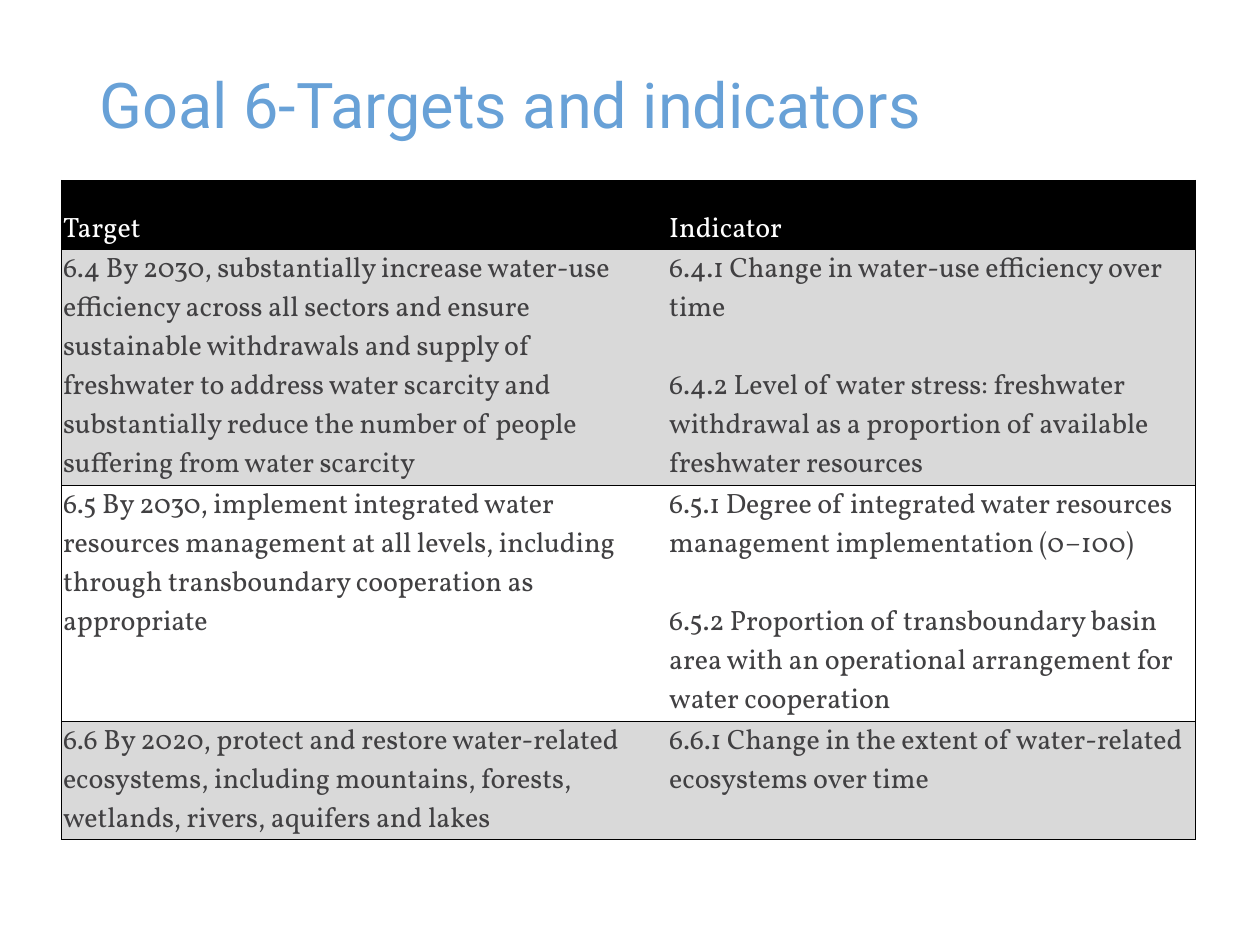
from pptx import Presentation
from pptx.dml.color import RGBColor
from pptx.enum.text import MSO_ANCHOR as Anchor, PP_ALIGN as Align
from pptx.oxml.ns import qn
from pptx.util import Pt
from lxml.etree import SubElement, Element

COLS = [346.4, 301.6]
HEIGHTS = [39.6, 134.6, 134.6, 67.6]
FILLS = ["000000", "D9D9D9", None, "D9D9D9"]
ROWS = [
    (["Target"], ["Indicator"]),
    (["6.4 By 2030, substantially increase water-use efficiency across all "
      "sectors and ensure sustainable withdrawals and supply of freshwater to "
      "address water scarcity and substantially reduce the number of people "
      "suffering from water scarcity"],
     ["6.4.1 Change in water-use efficiency over time",
      "6.4.2 Level of water stress: freshwater withdrawal as a proportion of "
      "available freshwater resources"]),
    (["6.5 By 2030, implement integrated water resources management at all "
      "levels, including through transboundary cooperation as appropriate"],
     ["6.5.1 Degree of integrated water resources management implementation "
      "(0–100)",
      "6.5.2 Proportion of transboundary basin area with an operational "
      "arrangement for water cooperation"]),
    (["6.6 By 2020, protect and restore water-related ecosystems, including "
      "mountains, forests, wetlands, rivers, aquifers and lakes"],
     ["6.6.1 Change in the extent of water-related ecosystems over time"]),
]


def rgb(code):
    return RGBColor.from_string(code)


class Deck:
    head_font, body_font = "Roboto", "Vollkorn"
    blue, white, ink, line = "68A1D7", "FFFFFF", "414042", "000000"

    def __init__(self, slide):
        self.slide = slide

    def style(self, para, name, size, color):
        font = para.font
        font.name, font.size, font.bold = name, Pt(size), False
        font.color.rgb = rgb(color)
        para.alignment = Align.LEFT

    def title(self, text, left, top, width, height):
        box = self.slide.shapes.title
        box.left, box.top = Pt(left), Pt(top)
        box.width, box.height = Pt(width), Pt(height)
        frame = box.text_frame
        frame.text = text
        frame.word_wrap = True
        frame.vertical_anchor = Anchor.BOTTOM
        para = frame.paragraphs[0]
        para.line_spacing = 0.9
        self.style(para, self.head_font, 36, self.blue)

    def border(self, cell, sides):
        """Draw the named sides (of L, R, T, B) and clear the others."""
        props = cell._tc.get_or_add_tcPr()
        for spot, side in enumerate("LRTB"):
            edge = Element(qn(f"a:ln{side}"), w=str(Pt(0.5)))
            if side in sides:
                fill = SubElement(edge, qn("a:solidFill"))
                SubElement(fill, qn("a:srgbClr"), val=self.line)
            else:
                SubElement(edge, qn("a:noFill"))
            props.insert(spot, edge)

    def cell(self, cell, texts, fill, color, anchor, sides):
        cell.margin_left = cell.margin_right = cell.margin_top = Pt(0.75)
        cell.margin_bottom = 0
        cell.vertical_anchor = anchor
        if fill:
            cell.fill.solid()
            cell.fill.fore_color.rgb = rgb(fill)
        else:
            cell.fill.background()
        self.border(cell, sides)
        frame = cell.text_frame
        frame.text = "\n".join(texts)
        for i, para in enumerate(frame.paragraphs):
            self.style(para, self.body_font, 16, color)
            if i:
                para.space_before = Pt(22.3)

    def table(self, rows, left, top):
        table = self.slide.shapes.add_table(
            len(rows), len(COLS), Pt(left), Pt(top),
            Pt(sum(COLS)), Pt(sum(HEIGHTS))).table
        table.first_row = table.horz_banding = False
        for col, width in zip(table.columns, COLS):
            col.width = Pt(width)
        for r, texts in enumerate(rows):
            table.rows[r].height = Pt(HEIGHTS[r])
            color = self.ink if r else self.white
            anchor = Anchor.TOP if r else Anchor.BOTTOM
            for c, sides in enumerate(("LTB", "RTB")):
                self.cell(table.cell(r, c), texts[c], FILLS[r],
                          color, anchor, sides)


def main():
    prs = Presentation()
    prs.slide_width, prs.slide_height = Pt(720), Pt(540)
    deck = Deck(prs.slides.add_slide(prs.slide_layouts[5]))
    deck.title("Goal 6-Targets and indicators", 49.7, 38.2, 540, 46.8)
    deck.table(ROWS, 35.3, 103)
    prs.save("out.pptx")


if __name__ == "__main__":
    main()
